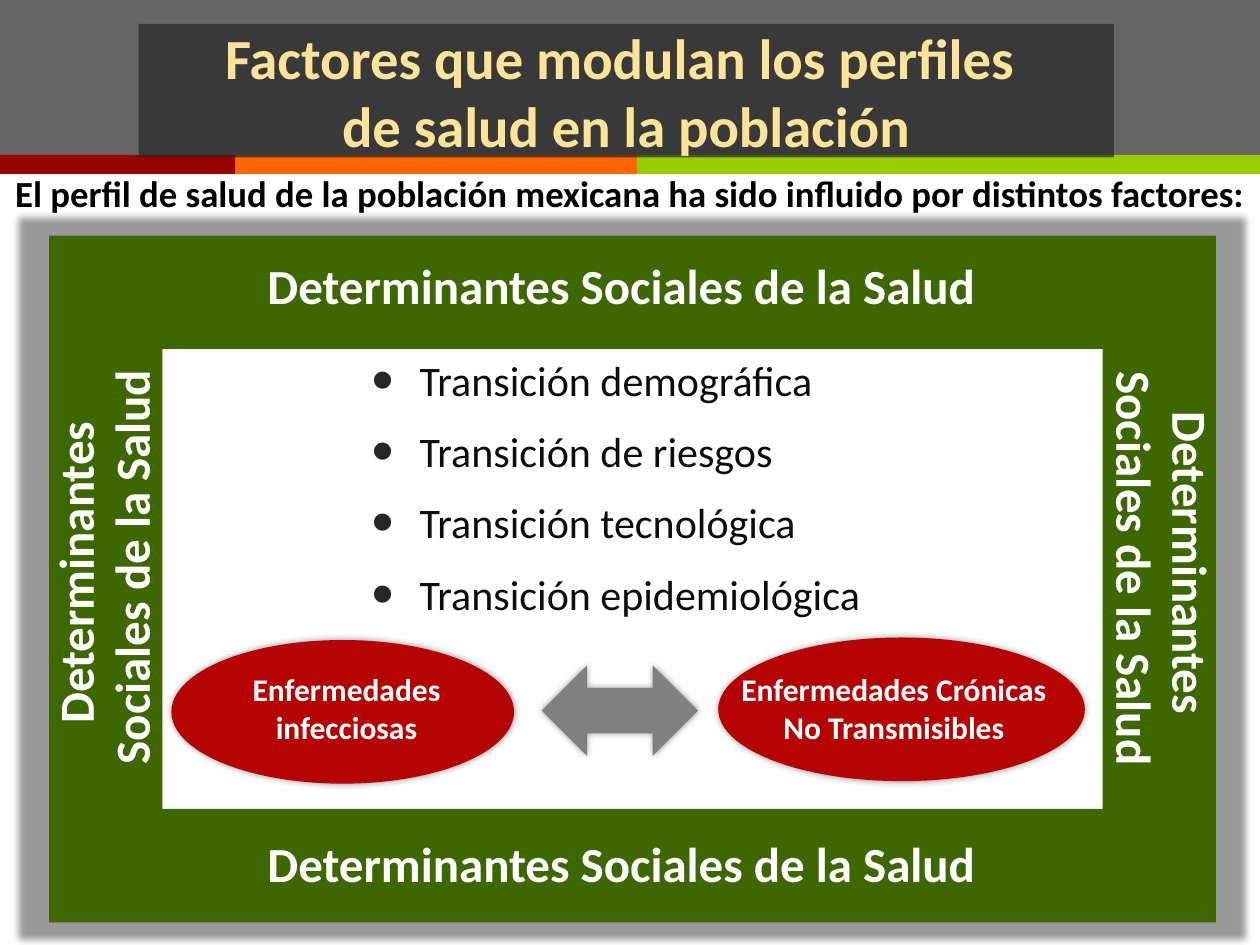
from dataclasses import dataclass

from lxml.etree import SubElement
from pptx import Presentation
from pptx.dml.color import RGBColor
from pptx.enum.shapes import MSO_SHAPE
from pptx.enum.text import MSO_ANCHOR, MSO_AUTO_SIZE, PP_ALIGN
from pptx.oxml.ns import qn
from pptx.util import Inches, Pt


@dataclass(frozen=True)
class Theme:
    font: str = "Calibri"
    dark: str = "262626"
    red: str = "990000"
    orange: str = "FF6600"
    lime: str = "99CC00"
    cream: str = "FFE399"
    body_text: str = "0D0D0D"
    oval: str = "B50202"
    arrow: str = "808080"
    frame: str = "3D6801"
    white: str = "FFFFFF"
    black: str = "000000"
    title_size: float = 32.4
    label_size: float = 28
    body_size: float = 24
    lead_size: float = 21
    oval_size: float = 18


THEME = Theme()


def place(shape, left, top, width, height):
    shape.left, shape.top = Inches(left), Inches(top)
    shape.width, shape.height = Inches(width), Inches(height)


def fill_solid(shape, color, opacity=100):
    shape.fill.solid()
    shape.fill.fore_color.rgb = RGBColor.from_string(color)
    if opacity < 100:
        color_node = shape.fill._xPr.find(qn("a:solidFill"))[0]
        SubElement(color_node, qn("a:alpha"), val=str(opacity * 1000))


def add_shadow(effects, blur=4, distance=0, angle=90, scale=100):
    shadow = SubElement(
        effects, qn("a:outerShdw"), blurRad=str(Pt(blur)), dist=str(Pt(distance)),
        dir=str(angle * 60000), sx=str(scale * 1000), sy=str(scale * 1000),
        algn="ctr", rotWithShape="0")
    color = SubElement(shadow, qn("a:srgbClr"), val=THEME.black)
    SubElement(color, qn("a:alpha"), val="40000")


def add_block(slide, kind, bounds, color, opacity=100, shadow_scale=None):
    block = slide.shapes.add_shape(kind, *map(Inches, bounds))
    block.shadow.inherit = False
    fill_solid(block, color, opacity)
    block.line.fill.background()
    if shadow_scale:
        add_shadow(block._element.spPr.find(qn("a:effectLst")), scale=shadow_scale)
    return block


def format_runs(para, size, color, bold=True):
    for span in para.runs:
        span.font.name = THEME.font
        span.font.size = Pt(size)
        span.font.bold = bold
        span.font.color.rgb = RGBColor.from_string(color)


def add_label(slide, text, bounds, size, color=THEME.white, rotation=0, spacing=None):
    box = slide.shapes.add_textbox(*map(Inches, bounds))
    box.rotation = rotation
    box.text_frame.word_wrap = True
    box.text_frame.text = text
    para = box.text_frame.paragraphs[0]
    para.alignment = PP_ALIGN.CENTER
    if spacing:
        para.line_spacing = Pt(spacing)
    format_runs(para, size, color)
    return box


def add_oval(slide, text, bounds, text_bounds):
    add_block(slide, MSO_SHAPE.OVAL, bounds, THEME.oval, shadow_scale=100)
    label = add_label(slide, text, text_bounds, THEME.oval_size)
    # Soft shadow on the lettering
    for span in label.text_frame.paragraphs[0].runs:
        properties = span.font._element
        effects = SubElement(properties, qn("a:effectLst"))
        add_shadow(effects, blur=3, distance=3, angle=45)
        properties.find(qn("a:latin")).addprevious(effects)


def set_title(slide, text):
    title = slide.shapes.title
    slide.shapes._spTree.append(title._element)
    place(title, 1.1, 0.19, 7.74, 1.06)
    fill_solid(title, THEME.dark, 70)
    frame = title.text_frame
    frame.text = text
    frame.auto_size = MSO_AUTO_SIZE.NONE
    frame.vertical_anchor = MSO_ANCHOR.MIDDLE
    frame.paragraphs[0].alignment = PP_ALIGN.CENTER
    format_runs(frame.paragraphs[0], THEME.title_size, THEME.cream)


def set_bullets(slide, items):
    body = slide.placeholders[1]
    slide.shapes._spTree.append(body._element)
    place(body, 0.85, 2.76, 8.12, 2.22)
    frame = body.text_frame
    frame.text = "\n".join(items)
    frame.auto_size = MSO_AUTO_SIZE.NONE
    for index, para in enumerate(frame.paragraphs):
        para.level = 4
        para.alignment = PP_ALIGN.JUSTIFY
        para.space_before = Pt(12 if index else 0)
        properties = para._p.get_or_add_pPr()
        properties.set("marL", str(Inches(2.38)))
        properties.set("indent", str(Inches(-0.38)))
        bullet_color = SubElement(properties, qn("a:buClr"))
        SubElement(bullet_color, qn("a:srgbClr"), val=THEME.dark)
        SubElement(properties, qn("a:buSzPct"), val="150000")
        SubElement(properties, qn("a:buFont"), typeface="Arial")
        SubElement(properties, qn("a:buChar"), char="•")
        format_runs(para, THEME.body_size, THEME.body_text, bold=False)


def main():
    deck = Presentation()
    deck.slide_width, deck.slide_height = Inches(10), Inches(7.5)
    slide = deck.slides.add_slide(deck.slide_layouts[1])

    # Header band and colour strip
    add_block(slide, MSO_SHAPE.RECTANGLE, (0, 0, 10, 1.24), THEME.dark, 70)
    edges = (0, 1.87, 5.06, 10)
    colors = (THEME.red, THEME.orange, THEME.lime)
    for left, right, color in zip(edges, edges[1:], colors):
        add_block(slide, MSO_SHAPE.RECTANGLE, (left, 1.23, right - left, 0.15), color)
    set_title(slide, "Factores que modulan los perfiles \vde salud en la población")

    # Transitions
    subjects = ("demográfica", "de riesgos", "tecnológica", "epidemiológica")
    set_bullets(slide, [f"Transición {subject}" for subject in subjects])

    # Disease groups joined by a double arrow
    add_oval(slide, "Enfermedades infecciosas",
             (1.36, 5.08, 2.72, 1.14), (1.69, 5.27, 2.12, 0.71))
    add_oval(slide, "Enfermedades Crónicas No Transmisibles",
             (5.7, 5.06, 2.91, 1.14), (5.76, 5.27, 2.67, 0.71))
    add_block(slide, MSO_SHAPE.LEFT_RIGHT_ARROW, (4.3, 5.28, 1.24, 0.72),
              THEME.arrow, shadow_scale=100)

    # Lead sentence
    add_label(slide, "El perfil de salud de la población mexicana ha sido influido "
              "por distintos factores:", (0, 1.31, 10, 0.45), THEME.lead_size, THEME.black)

    # Frame of social determinants, labelled on its four sides
    border = add_block(slide, MSO_SHAPE.FRAME, (0.39, 1.87, 9.26, 5.45),
                       THEME.frame, shadow_scale=105)
    border.adjustments[0] = 0.165
    for top in (1.98, 6.57):
        add_label(slide, "Determinantes Sociales de la Salud",
                  (0.22, top, 9.42, 0.57), THEME.label_size)
    for left, height, rotation in ((-1.89, 1, 270), (6.49, 1.02, 90)):
        add_label(slide, "Determinantes \vSociales de la Salud", (left, 4, 5.44, height),
                  THEME.label_size, rotation=rotation, spacing=32)

    deck.save("out.pptx")


if __name__ == "__main__":
    main()
